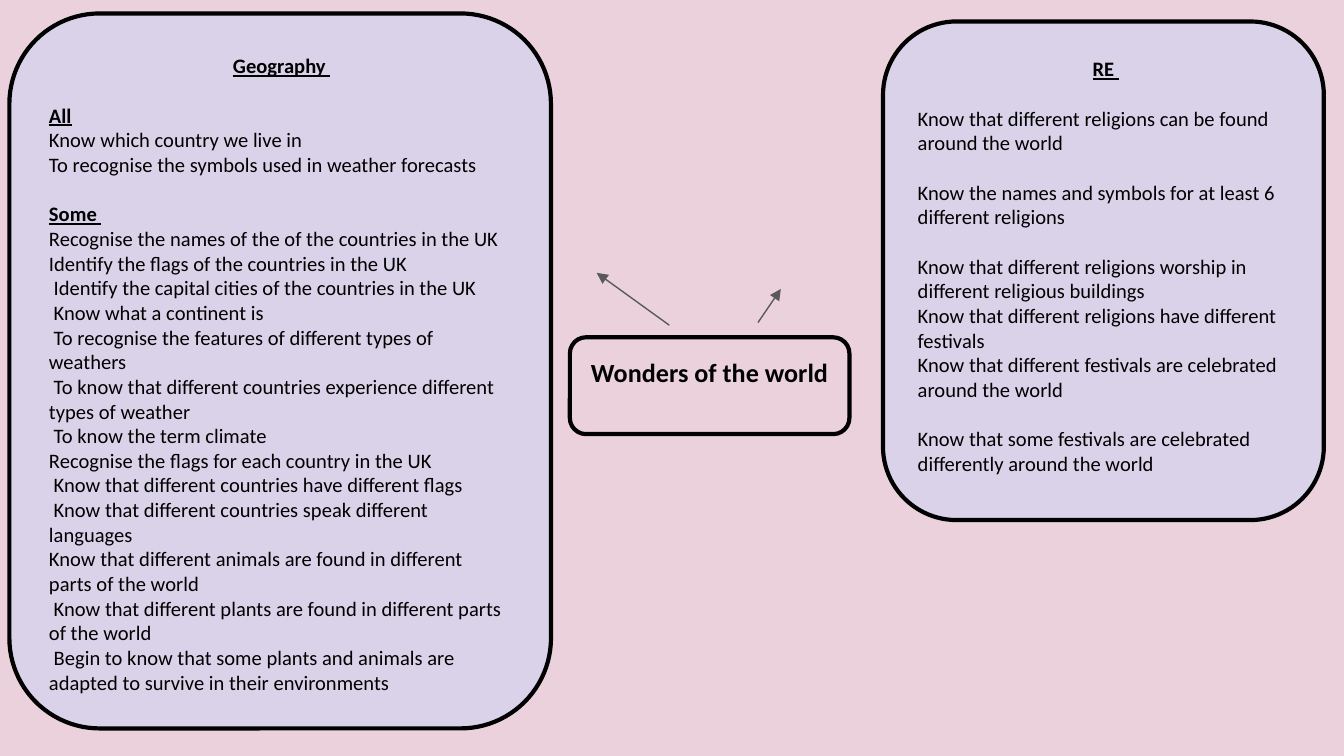
from lxml import etree
from pptx import Presentation
from pptx.dml.color import RGBColor
from pptx.enum import shapes, text
from pptx.oxml import ns
from pptx.util import Pt

SCALE = 4572  # EMU in one px, 200 px to the inch
PINK = RGBColor(0xEA, 0xD1, 0xDC)
LILAC = RGBColor(0xD9, 0xD2, 0xE9)
BLACK = RGBColor(0, 0, 0)
GREY = RGBColor(0x59, 0x59, 0x59)

MARGIN = 20
GAP = 13.2  # one line of body text, in points


def px(length):
    return length * SCALE


def write(para, words, size=11, bold=False, underline=False,
          centred=False, before=0, indent=0):
    para.alignment = text.PP_ALIGN.CENTER if centred else text.PP_ALIGN.LEFT
    if before:
        para.space_before = Pt(before)
    if indent:
        para._p.get_or_add_pPr().set("indent", str(px(indent)))
    span = para.add_run()
    span.text = words
    font = span.font
    font.name, font.size = "Calibri", Pt(size)
    font.bold, font.underline = bold, underline
    font.color.rgb = BLACK


class TopicMap:
    def __init__(self, deck):
        self.page = deck.slides.add_slide(deck.slide_layouts[6])
        fill = self.page.background.fill
        fill.solid()
        fill.fore_color.rgb = PINK

    def panel(self, left, top, width, height, fill, lines,
              anchor=text.MSO_ANCHOR.TOP, right=MARGIN, bottom=MARGIN):
        box = self.page.shapes.add_shape(
            shapes.MSO_SHAPE.ROUNDED_RECTANGLE,
            px(left), px(top), px(width), px(height))
        box.shadow.inherit = False
        box.fill.solid()
        box.fill.fore_color.rgb = fill
        box.line.color.rgb = BLACK
        box.line.width = Pt(2.25)
        frame = box.text_frame
        frame.word_wrap = True
        frame.vertical_anchor = anchor
        frame.margin_left = frame.margin_top = px(MARGIN)
        frame.margin_right, frame.margin_bottom = px(right), px(bottom)
        for number, (words, style) in enumerate(lines):
            para = frame.add_paragraph() if number else frame.paragraphs[0]
            write(para, words, **style)

    def arrow(self, x1, y1, x2, y2):
        line = self.page.shapes.add_connector(
            shapes.MSO_CONNECTOR.STRAIGHT, px(x1), px(y1), px(x2), px(y2))
        line.line.color.rgb = GREY
        line.line.width = Pt(0.75)
        etree.SubElement(line.line._get_or_add_ln(), ns.qn("a:tailEnd"), type="triangle")
        etree.SubElement(line._element.spPr, ns.qn("a:effectLst"))


HEADING = dict(bold=True, underline=True)
SPACED = dict(before=GAP)
INDENTED = dict(indent=7)

RE_LINES = [
    ("RE ", dict(HEADING, centred=True, indent=7)),
    ("Know that different religions can be found around the world", SPACED),
    ("Know the names and symbols for at least 6 different religions", SPACED),
    ("Know that different religions worship in different religious buildings", SPACED),
    ("Know that different religions have different festivals", {}),
    ("Know that different festivals are celebrated around the world", {}),
    ("Know that some festivals are celebrated differently around the world", SPACED),
]

GEOGRAPHY_LINES = [
    ("Geography ", dict(HEADING, centred=True, indent=10)),
    ("All", dict(HEADING, before=GAP)),
    ("Know which country we live in", {}),
    ("To recognise the symbols used in weather forecasts", {}),
    ("Some ", dict(HEADING, before=GAP)),
    ("Recognise the names of the of the countries in the UK", {}),
    ("Identify the flags of the countries in the UK", {}),
    ("Identify the capital cities of the countries in the UK", INDENTED),
    ("Know what a continent is", INDENTED),
    ("To recognise the features of different types of weathers", INDENTED),
    ("To know that different countries experience different types of weather", INDENTED),
    ("To know the term climate", INDENTED),
    ("Recognise the flags for each country in the UK", {}),
    ("Know that different countries have different flags", INDENTED),
    ("Know that different countries speak different languages", INDENTED),
    ("Know that different animals are found in different parts of the world", {}),
    ("Know that different plants are found in different parts of the world", INDENTED),
    ("Begin to know that some plants and animals are adapted to survive "
     "in their environments", INDENTED),
]


def main():
    deck = Presentation()
    deck.slide_width, deck.slide_height = px(2000), px(1125)
    topic = TopicMap(deck)

    # Central theme, with its text set a little above the middle
    topic.panel(848, 502, 416, 144, PINK,
                [("Wonders of the world", dict(size=14, bold=True, centred=True))],
                anchor=text.MSO_ANCHOR.MIDDLE, bottom=62)

    # Subjects, each with the arrow that leads to it
    topic.arrow(1128, 480, 1162, 430)
    topic.panel(1314, 32, 656, 742, LILAC, RE_LINES)
    topic.panel(14, 20, 806, 1064, LILAC, GEOGRAPHY_LINES, right=25)
    topic.arrow(996, 484, 888, 406)

    deck.save("out.pptx")


if __name__ == "__main__":
    main()
